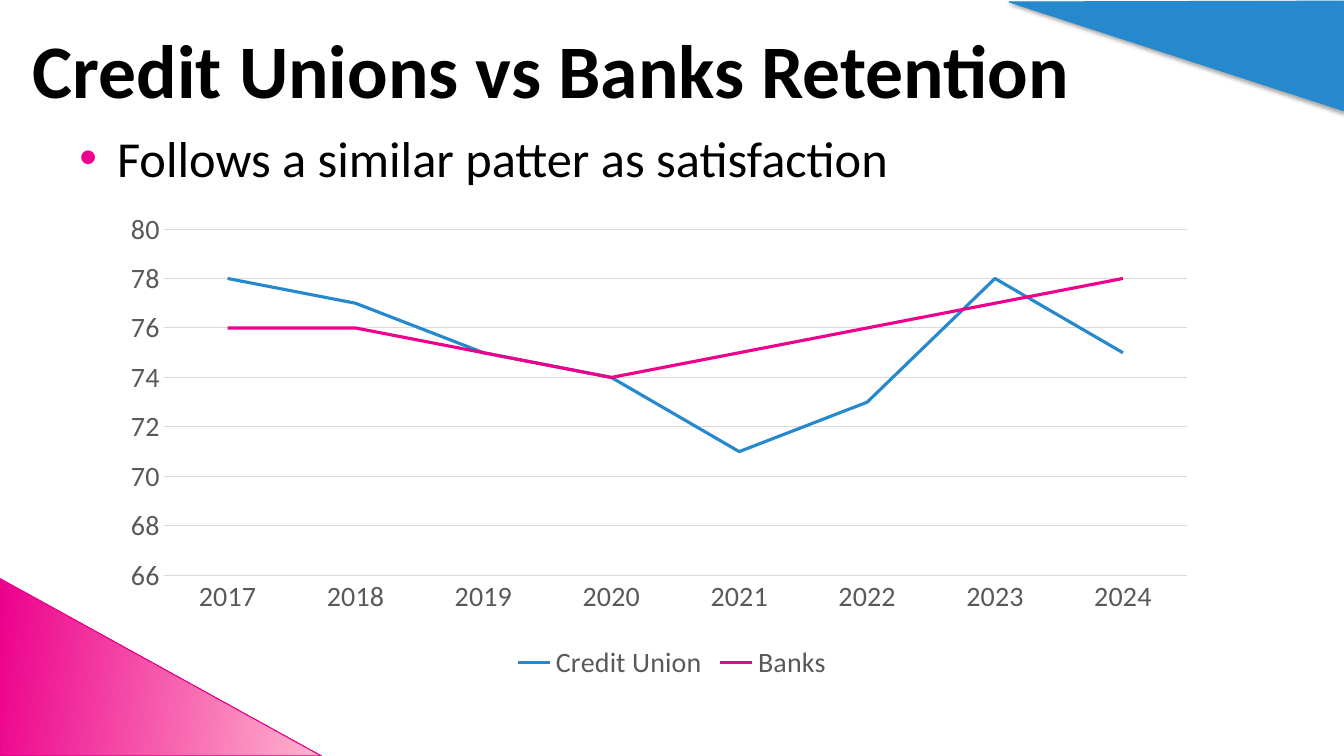
from dataclasses import dataclass

from lxml import etree
from pptx import Presentation, util as u
from pptx.chart import data as cd
from pptx.dml import color as dc
from pptx.enum import chart as ec, text as et
from pptx.oxml import ns, xmlchemy as xc


@dataclass(frozen=True)
class Theme:
    font: str = "Calibri"
    blue: str = "2688CD"
    pink: str = "ED008C"
    pale: str = "FFB4CD"
    edge: str = "E80089"
    ink: str = "000000"
    gray: str = "595959"
    grid: str = "D9D9D9"
    title: int = 54
    body: int = 36
    label: int = 20


@dataclass(frozen=True)
class Wedge:
    points: tuple
    fill: tuple  # one colour, or two for a gradient
    line: str
    angle: float = 0


@dataclass(frozen=True)
class Label:
    box: tuple
    words: str
    size: int
    bold: bool = False
    bullet: str = ""
    anchor: et.MSO_ANCHOR = et.MSO_ANCHOR.TOP


@dataclass(frozen=True)
class Line:
    name: str
    color: str
    values: tuple


T = Theme()
WIDE, HIGH = 33.87, 19.05

WEDGES = [
    Wedge(((WIDE, 0.03), (WIDE, 2.79), (25.43, 0.05)), (T.blue,), T.blue),
    Wedge(((0, 14.58), (8.1, HIGH), (0, HIGH)), (T.pink, T.pale), T.edge, 353.4),
]
LABELS = [
    Label((0.58, 0.53, 28.37, 2.36), "Credit Unions vs Banks Retention",
          T.title, bold=True, anchor=et.MSO_ANCHOR.MIDDLE),
    Label((1.75, 3.07, 28.93, 2.06), "Follows a similar patter as satisfaction",
          T.body, bullet="•"),
]
YEARS = [str(year) for year in range(2017, 2025)]
LINES = [
    Line("Credit Union", T.blue, (78, 77, 75, 74, 71, 73, 78, 75)),
    Line("Banks", T.pink, (76, 76, 75, 74, 75, 76, 77, 78)),
]
CHART = (2.95, 5.28, 27.97, 11.99)
PLOT = {"x": 0.042, "y": 0.041, "w": 0.922, "h": 0.728}


def rgb(code: str) -> dc.RGBColor:
    return dc.RGBColor.from_string(code)


def add(parent: xc.BaseOxmlElement, tag: str, **attrs: str) -> etree.ElementBase:
    return etree.SubElement(parent, ns.qn(tag), attrs)


def style(font, size: int, code: str, bold: bool = False) -> None:
    font.name, font.size, font.bold = T.font, u.Pt(size), bold
    font.color.rgb = rgb(code)


def stroke(line, code: str, width: float) -> None:
    line.color.rgb = rgb(code)
    line.width = u.Pt(width)


def draw_wedge(slide, wedge: Wedge) -> None:
    first, *rest = [(u.Cm(x), u.Cm(y)) for x, y in wedge.points]
    pen = slide.shapes.build_freeform(*first)
    pen.add_line_segments(rest, close=True)
    shape = pen.convert_to_shape()
    if len(wedge.fill) == 1:
        shape.fill.solid()
        shape.fill.fore_color.rgb = rgb(wedge.fill[0])
    else:
        shape.fill.gradient()
        shape.fill.gradient_angle = wedge.angle
        for stop, code in zip(shape.fill.gradient_stops, wedge.fill):
            stop.color.rgb = rgb(code)
    stroke(shape.line, wedge.line, 0.75)
    # Soft shadow straight below
    shape.shadow.inherit = False
    glow = shape._element.spPr.find(ns.qn("a:effectLst"))
    shade = add(glow, "a:outerShdw", blurRad=str(u.Pt(3.1)),
                dist=str(u.Pt(1.8)), dir="5400000", rotWithShape="0")
    add(add(shade, "a:srgbClr", val=T.ink), "a:alpha", val="35000")


def draw_label(slide, label: Label) -> None:
    frame = slide.shapes.add_textbox(*map(u.Cm, label.box)).text_frame
    frame.word_wrap = True
    frame.vertical_anchor = label.anchor
    para = frame.paragraphs[0]
    run = para.add_run()
    run.text = label.words
    style(run.font, label.size, T.ink, label.bold)
    if label.bullet:
        para.space_after = u.Pt(6)
        props = para._p.get_or_add_pPr()
        indent = u.Cm(0.95)
        props.set("marL", str(indent))
        props.set("indent", str(-indent))
        add(add(props, "a:buClr"), "a:srgbClr", val=T.pink)
        add(props, "a:buFont", typeface="Arial")
        add(props, "a:buChar", char=label.bullet)


def place_plot(chart) -> None:
    area = chart._chartSpace.chart.plotArea
    old = area.find(ns.qn("c:layout"))
    if old is not None:
        area.remove(old)
    layout = etree.Element(ns.qn("c:layout"))
    area.insert(0, layout)
    manual = add(layout, "c:manualLayout")
    add(manual, "c:layoutTarget", val="inner")
    for side in "xy":
        add(manual, f"c:{side}Mode", val="edge")
    for side, share in PLOT.items():
        add(manual, f"c:{side}", val=str(share))


def draw_chart(slide) -> None:
    data = cd.CategoryChartData(number_format="0")
    data.categories = YEARS
    for line in LINES:
        data.add_series(line.name, line.values)
    chart = slide.shapes.add_chart(
        ec.XL_CHART_TYPE.LINE, *map(u.Cm, CHART), data).chart
    style(chart.font, T.label, T.gray)
    chart.has_title = False
    place_plot(chart)

    # Series
    chart.plots[0].vary_by_categories = False
    for series, line in zip(chart.plots[0].series, LINES):
        series.smooth = False
        series.marker.style = ec.XL_MARKER_STYLE.NONE
        stroke(series.format.line, line.color, 2.25)

    # Axes
    years, scale = chart.category_axis, chart.value_axis
    for axis in (years, scale):
        axis.major_tick_mark = axis.minor_tick_mark = ec.XL_TICK_MARK.NONE
        style(axis.tick_labels.font, T.label, T.gray)
    stroke(years.format.line, T.grid, 0.75)
    scale.minimum_scale, scale.maximum_scale, scale.major_unit = 66, 80, 2
    scale.format.line.fill.background()
    scale.has_major_gridlines = True
    stroke(scale.major_gridlines.format.line, T.grid, 0.75)

    # Legend
    chart.has_legend = True
    chart.legend.position = ec.XL_LEGEND_POSITION.BOTTOM
    chart.legend.include_in_layout = False
    style(chart.legend.font, T.label, T.gray)


def main() -> None:
    deck = Presentation()
    deck.slide_width, deck.slide_height = u.Cm(WIDE), u.Cm(HIGH)
    slide = deck.slides.add_slide(deck.slide_layouts[6])
    for wedge in WEDGES:
        draw_wedge(slide, wedge)
    for label in LABELS:
        draw_label(slide, label)
    draw_chart(slide)
    deck.save("out.pptx")


if __name__ == "__main__":
    main()
